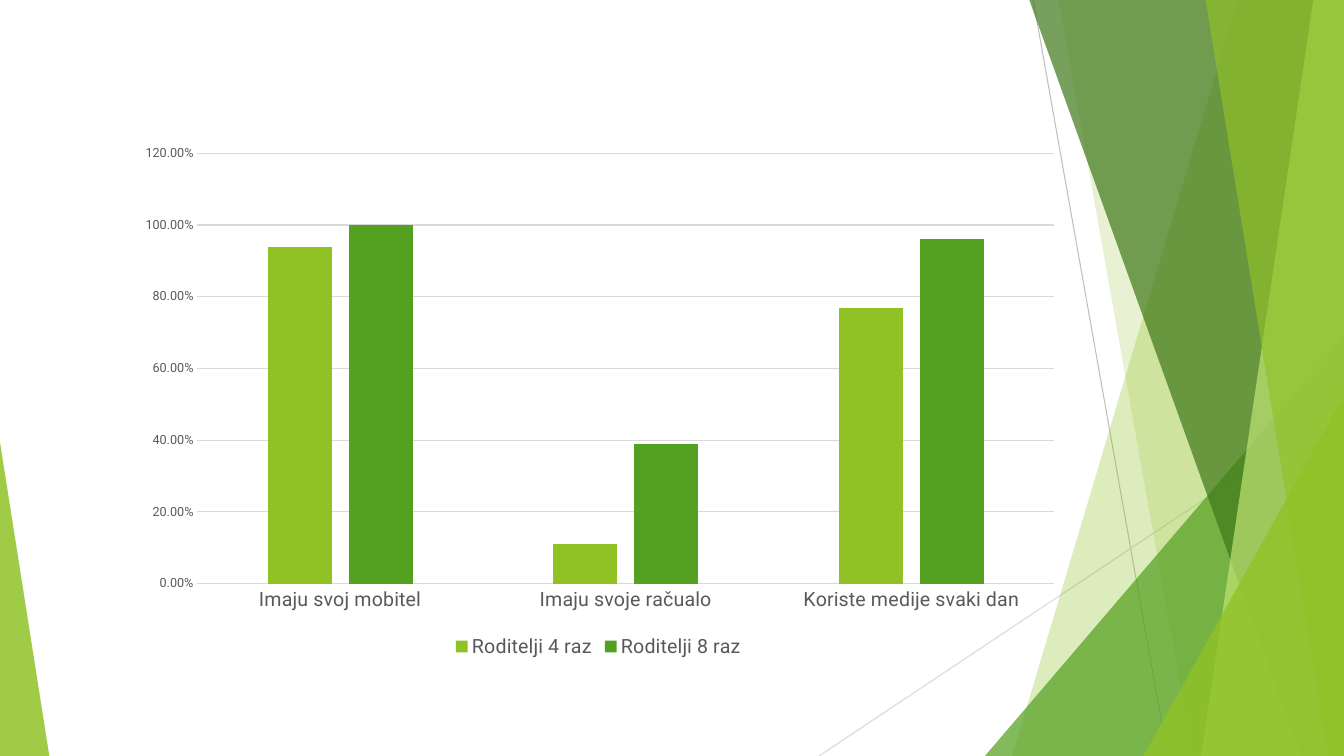
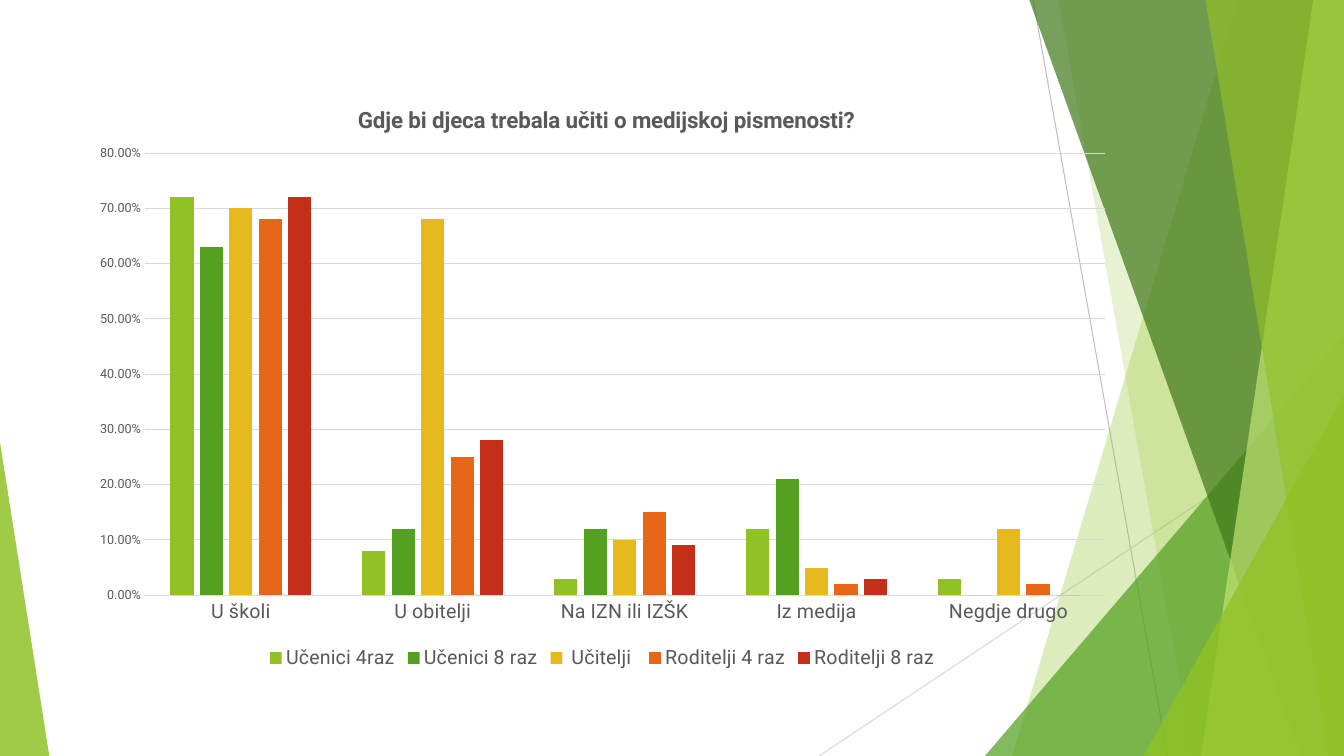
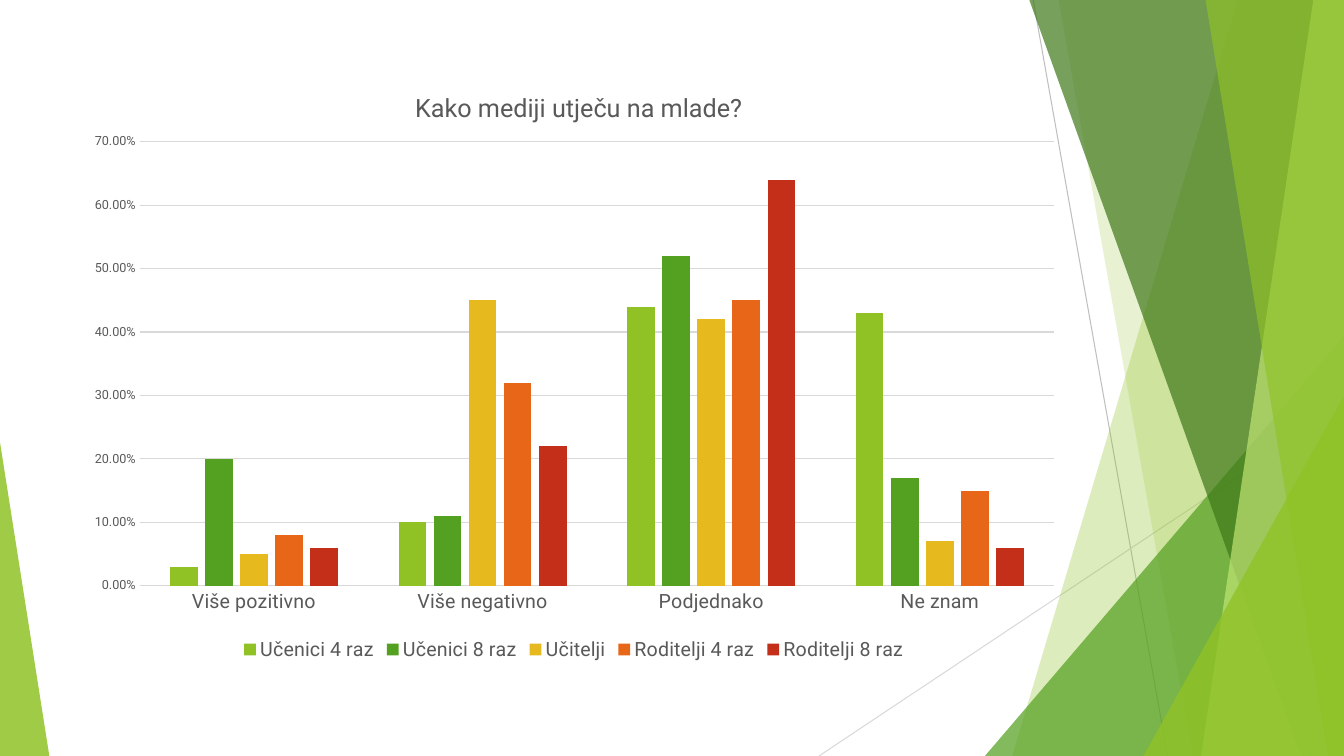
"""Builds three survey chart slides on a shared faceted green backdrop."""
import pptx
import pptx.chart.data
import pptx.dml.color
import pptx.enum.chart
import pptx.enum.shapes
import pptx.oxml
import pptx.oxml.ns
import pptx.util

RGB = pptx.dml.color.RGBColor
LIME = RGB(0x90, 0xC2, 0x26)
GREEN = RGB(0x54, 0xA0, 0x21)
DARK_GREEN = RGB(0x3F, 0x78, 0x19)
PALE_LIME = RGB(0xC0, 0xE4, 0x74)
YELLOW = RGB(0xE6, 0xB9, 0x1E)
ORANGE = RGB(0xE7, 0x66, 0x18)
RED = RGB(0xC4, 0x2F, 0x1A)
TEXT_GREY = RGB(0x59, 0x59, 0x59)
RULE_GREY = RGB(0xD9, 0xD9, 0xD9)
EDGE_GREY = RGB(0xBF, 0xBF, 0xBF)
SERIES_COLORS = (LIME, GREEN, YELLOW, ORANGE, RED)

FONT = "Roboto"
EMU_PER_PX = 9525
WIDTH, HEIGHT = 1280, 720

SURVEYS = [
    dict(
        box=(119, 130, 902, 501), plot=(188, 146, 816, 410), top=1.2, step=0.2,
        categories=["Imaju svoj mobitel", "Imaju svoje račualo", "Koriste medije svaki dan"],
        answers={
            "Roditelji 4 raz": (0.94, 0.11, 0.77),
            "Roditelji 8 raz": (1, 0.39, 0.96),
        },
    ),
    dict(
        box=(75, 77, 997, 565), plot=(138, 146, 914, 421), top=0.8, step=0.1,
        title="Gdje bi djeca trebala učiti o medijskoj pismenosti?",
        title_at=(337, 97), title_format=dict(size=16, bold=True),
        categories=["U školi", "U obitelji", "Na IZN ili IZŠK", "Iz medija", "Negdje drugo"],
        answers={
            "Učenici 4raz": (0.72, 0.08, 0.03, 0.12, 0.03),
            "Učenici 8 raz": (0.63, 0.12, 0.12, 0.21, 0),
            " Učitelji ": (0.7, 0.68, 0.1, 0.05, 0.12),
            "Roditelji 4 raz": (0.68, 0.25, 0.15, 0.02, 0.02),
            "Roditelji 8 raz": (0.72, 0.28, 0.09, 0.03, 0),
        },
    ),
    dict(
        box=(71, 62, 951, 572), plot=(133, 135, 871, 423), top=0.7, step=0.1,
        title="Kako mediji utječu na mlade?",
        title_at=(391, 83), title_format=dict(size=18),
        categories=["Više pozitivno", "Više negativno", "Podjednako", "Ne znam"],
        answers={
            "Učenici 4 raz": (0.03, 0.1, 0.44, 0.43),
            "Učenici 8 raz": (0.2, 0.11, 0.52, 0.17),
            "Učitelji": (0.05, 0.45, 0.42, 0.07),
            "Roditelji 4 raz": (0.08, 0.32, 0.45, 0.15),
            "Roditelji 8 raz": (0.06, 0.22, 0.64, 0.06),
        },
    ),
]


def px(*lengths):
    """Turn pixel lengths into EMU."""
    return [pptx.util.Emu(length * EMU_PER_PX) for length in lengths]


def add_child(parent, tag, **attributes):
    """Append an XML element with attributes to its parent."""
    child = pptx.oxml.parse_xml(f"<{tag} {pptx.oxml.ns.nsdecls(tag.split(':')[0])}/>")
    for key, value in attributes.items():
        child.set(key, str(value))
    parent.append(child)
    return child


def style_font(font, size, bold=False, color=TEXT_GREY):
    """Apply the deck's font settings."""
    font.name = FONT
    font.size = pptx.util.Pt(size)
    font.bold = bold
    font.color.rgb = color


def write_text(frame, text, **text_format):
    """Write formatted text into a text frame."""
    frame.text = text
    style_font(frame.paragraphs[0].runs[0].font, **text_format)


def style_line(line, color):
    """Give a line the thin rule style."""
    line.color.rgb = color
    line.width = pptx.util.Pt(0.75)


def paint_facet(facet, color, opacity):
    """Fill a facet with a see-through colour and no outline."""
    facet.shadow.inherit = False
    facet.fill.solid()
    facet.fill.fore_color.rgb = color
    facet.line.fill.background()
    fill_color = facet.element.find(".//" + pptx.oxml.ns.qn("a:srgbClr"))
    add_child(fill_color, "a:alpha", val=opacity * 1000)


def add_edge(shapes, start, end, color):
    """Draw a thin backdrop line."""
    edge = shapes.add_connector(
        pptx.enum.shapes.MSO_CONNECTOR.STRAIGHT, *px(*start, *end))
    style_line(edge.line, color)
    add_child(edge.element.spPr, "a:effectLst")


def add_band(shapes, top_x, bottom_x, color, opacity):
    """Draw a band from a slanted left side to the right slide edge."""
    outline = shapes.build_freeform(top_x, -1, scale=EMU_PER_PX)
    outline.add_line_segments([(WIDTH, -1), (WIDTH, HEIGHT), (bottom_x, HEIGHT)])
    paint_facet(outline.convert_to_shape(), color, opacity)


def add_corner(shapes, left, top, width, tip, color, opacity):
    """Draw a triangle standing on the bottom slide edge."""
    corner = shapes.add_shape(
        pptx.enum.shapes.MSO_SHAPE.ISOSCELES_TRIANGLE,
        *px(left, top, width, HEIGHT - top))
    corner.adjustments[0] = tip
    paint_facet(corner, color, opacity)


def build_backdrop(slide):
    """Draw the facets and move them to the slide's layout."""
    shapes = slide.shapes
    add_edge(shapes, (984, 0), (1112, HEIGHT), EDGE_GREY)
    add_edge(shapes, (WIDTH, 387), (780, HEIGHT), RULE_GREY)
    add_band(shapes, 1179, 964, LIME, 30)
    add_band(shapes, 1008, 1136, LIME, 20)
    add_corner(shapes, 938, 320, 342, 1, GREEN, 72)
    add_band(shapes, 980, 1239, DARK_GREEN, 70)
    add_band(shapes, 1251, 1144, PALE_LIME, 70)
    add_band(shapes, 1148, 1265, LIME, 65)
    add_corner(shapes, 1089, 377, 191, 1, LIME, 80)
    add_corner(shapes, 0, 421, 47, 0, LIME, 85)
    layout_tree = slide.slide_layout.shapes.element
    for facet in list(shapes):
        layout_tree.append(facet.element)


def pin(part, index, box, place, inner=False):
    """Fix a chart part at a slide position, as shares of the chart box."""
    old_layout = part.find(pptx.oxml.ns.qn("c:layout"))
    if old_layout is not None:
        part.remove(old_layout)
    layout = add_child(part, "c:layout")
    part.insert(index, layout)
    manual = add_child(layout, "c:manualLayout")
    if inner:
        add_child(manual, "c:layoutTarget", val="inner")
    for axis in "xy":
        add_child(manual, f"c:{axis}Mode", val="edge")
    shares = [(place[0] - box[0]) / box[2], (place[1] - box[1]) / box[3]]
    shares += [length / whole for length, whole in zip(place[2:], box[2:])]
    for side, share in zip("xywh", shares):
        add_child(manual, f"c:{side}", val=round(share, 4))


def style_axes(chart, top, step):
    """Format the category and percentage axes."""
    no_tick = pptx.enum.chart.XL_TICK_MARK.NONE
    for axis, size in ((chart.category_axis, 14), (chart.value_axis, 9)):
        axis.major_tick_mark = axis.minor_tick_mark = no_tick
        style_font(axis.tick_labels.font, size)
    style_line(chart.category_axis.format.line, RULE_GREY)
    percent = chart.value_axis
    percent.minimum_scale, percent.maximum_scale, percent.major_unit = 0, top, step
    percent.format.line.fill.background()
    style_line(percent.major_gridlines.format.line, RULE_GREY)
    percent.tick_labels.number_format = "0.00%"
    percent.tick_labels.number_format_is_linked = False


def add_survey(slide, box, plot, top, step, categories, answers,
               title=None, title_at=None, title_format=None):
    """Place one clustered survey chart in its box."""
    survey = pptx.chart.data.CategoryChartData(number_format="0.00%")
    survey.categories = categories
    for group, shares in answers.items():
        survey.add_series(group, shares)
    chart = slide.shapes.add_chart(
        pptx.enum.chart.XL_CHART_TYPE.COLUMN_CLUSTERED, *px(*box), survey).chart
    style_font(chart.font, 10)
    chart.has_title = title is not None
    if title:
        write_text(chart.chart_title.text_frame, title, **title_format)
        pin(chart.chart_title.element, 1, box, title_at)
    chart.has_legend = True
    chart.legend.position = pptx.enum.chart.XL_LEGEND_POSITION.BOTTOM
    chart.legend.include_in_layout = False
    style_font(chart.legend.font, 14)
    style_axes(chart, top, step)
    columns = chart.plots[0]
    columns.vary_by_categories = False
    columns.gap_width, columns.overlap = 219, -27
    for group, color in zip(columns.series, SERIES_COLORS):
        group.format.fill.solid()
        group.format.fill.fore_color.rgb = color
    plot_area = chart.element.find(".//" + pptx.oxml.ns.qn("c:plotArea"))
    pin(plot_area, 0, box, plot, inner=True)


def main():
    """Build and save the presentation."""
    deck = pptx.Presentation()
    deck.slide_width, deck.slide_height = px(WIDTH, HEIGHT)
    layout = deck.slide_layouts[6]
    for placeholder in list(layout.placeholders):
        layout.shapes.element.remove(placeholder.element)
    slides = [deck.slides.add_slide(layout) for _ in SURVEYS]
    build_backdrop(slides[0])
    for slide, survey in zip(slides, SURVEYS):
        add_survey(slide, **survey)
    deck.save("out.pptx")


if __name__ == "__main__":
    main()
